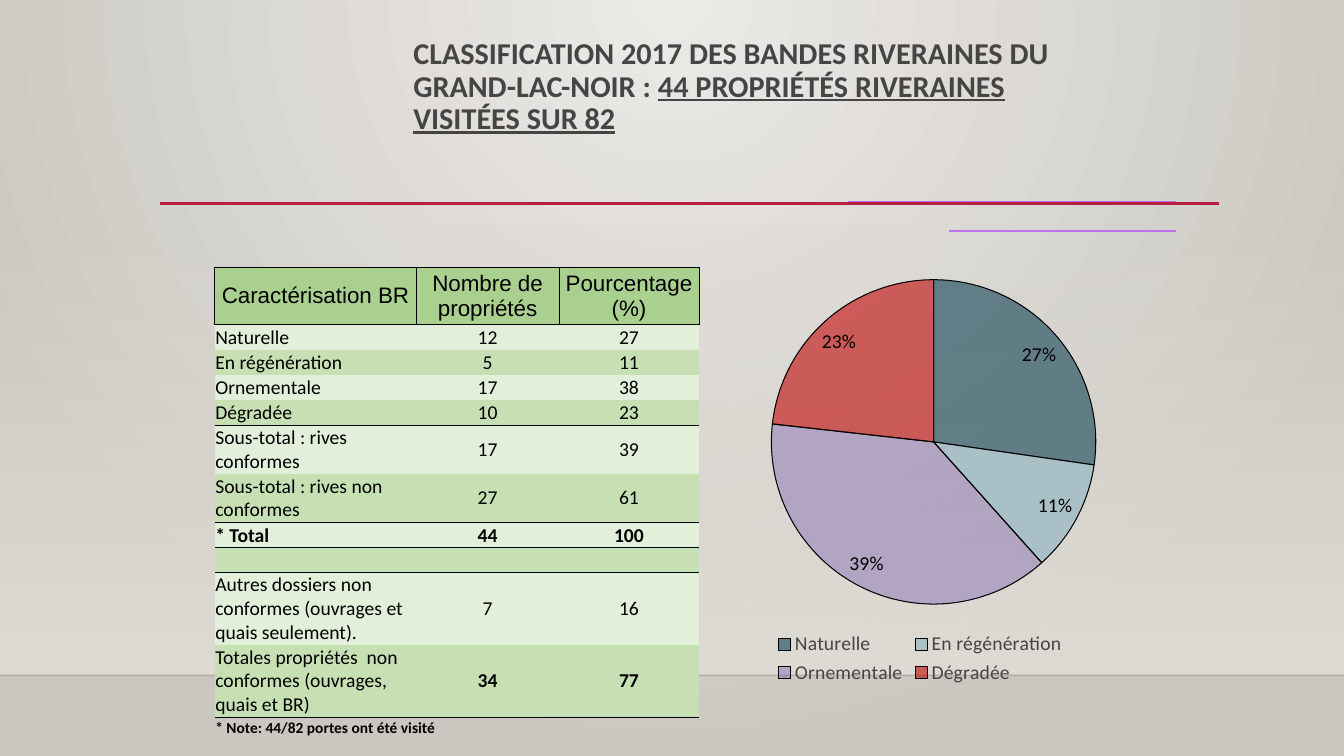
"""Build the 2017 shoreline classification slide with its table and pie chart."""
from typing import NamedTuple

import lxml.etree
import pptx
import pptx.chart.data
import pptx.dml.color
import pptx.enum.chart
import pptx.enum.shapes
import pptx.enum.text
import pptx.oxml
import pptx.oxml.ns
import pptx.util

RGBColor = pptx.dml.color.RGBColor
Anchor = pptx.enum.text.MSO_ANCHOR
qn = pptx.oxml.ns.qn

BLACK = RGBColor(0x00, 0x00, 0x00)
FLOOR_EDGE = RGBColor(0x00, 0x00, 0x01)
CHARCOAL = RGBColor(0x45, 0x45, 0x45)
CRIMSON = RGBColor(0xB7, 0x1E, 0x42)
VIOLET = RGBColor(0xBC, 0x72, 0xF0)
WALL_LIGHT = RGBColor(0xEC, 0xEA, 0xE7)
WALL_DARK = RGBColor(0xCA, 0xC7, 0xC1)
WALL_GLOW = RGBColor(0xDF, 0xDB, 0xD5)
HEADER_GREEN = RGBColor(0xA9, 0xD0, 0x8E)
BAND_GREENS = (RGBColor(0xC6, 0xE0, 0xB4), RGBColor(0xE2, 0xEF, 0xDA))

GRID_COLUMNS, GRID_ROWS = 133.33, 75
FLOOR_ROW = 67
NO_GRID_STYLE = "{2D5ABB26-0587-4C30-8999-92F81FD0307C}"
COLUMN_SPANS = (20, 14.15, 13.9)


class Rule(NamedTuple):
    start: float
    end: float
    row: float
    color: RGBColor
    width: float
    opacity: int = 100


class TableRow(NamedTuple):
    cells: tuple[str, str, str]
    height: float = 2.5
    ruled: bool = False
    label_bold: bool = False
    value_bold: bool = False
    size: float = 14
    anchor: Anchor = Anchor.MIDDLE


class Slice(NamedTuple):
    name: str
    value: int
    label: str
    color: RGBColor
    opacity: int


RULES = (
    Rule(0, GRID_COLUMNS, FLOOR_ROW, FLOOR_EDGE, 1, 20),
    Rule(15.9, 120.95, 20.2, CRIMSON, 2.5),
    Rule(84.15, 116.7, 20, VIOLET, 1.25),
    Rule(94.15, 116.7, 22.9, VIOLET, 1.25),
)
TABLE_ROWS = (
    TableRow(("Caractérisation BR", "Nombre de propriétés", "Pourcentage (%)"), 5.7, size=16),
    TableRow(("Naturelle", "12", "27")),
    TableRow(("En régénération", "5", "11")),
    TableRow(("Ornementale", "17", "38")),
    TableRow(("Dégradée", "10", "23"), ruled=True),
    TableRow(("Sous-total : rives conformes", "17", "39"), 4.8),
    TableRow(("Sous-total : rives non conformes", "27", "61"), 4.8, ruled=True),
    TableRow(("* Total", "44", "100"), ruled=True, label_bold=True, value_bold=True,
             anchor=Anchor.BOTTOM),
    TableRow(("", "", ""), ruled=True),
    TableRow(("Autres dossiers non conformes (ouvrages et quais seulement).", "7", "16"), 7.1),
    TableRow(("Totales propriétés  non conformes (ouvrages, quais et BR)", "34", "77"), 7.2,
             ruled=True, value_bold=True),
    TableRow(("* Note: 44/82 portes ont été visité", "", ""), 2, label_bold=True, size=11,
             anchor=Anchor.BOTTOM),
)
SLICES = (
    Slice("Naturelle", 27, "27%", RGBColor(0x4C, 0x6E, 0x7A), 85),
    Slice("En régénération", 11, "11%", RGBColor(0xA4, 0xBE, 0xC6), 90),
    Slice("Ornementale", 38, "39%", RGBColor(0x79, 0x5F, 0xAF), 41),
    Slice("Dégradée", 23, "23%", RGBColor(0xC0, 0x00, 0x00), 58),
)


def grid(units: float) -> int:
    """Convert grid columns or rows to a length."""
    return pptx.util.Inches(units / 10)


def set_opacity(element: lxml.etree._Element, percent: int) -> None:
    """Give every RGB colour inside the element an opacity."""
    for color in element.iter(qn("a:srgbClr")):
        lxml.etree.SubElement(color, qn("a:alpha"), val=str(percent * 1000))


def set_font(font, size: float, color: RGBColor, name: str = "Calibri", bold: bool = False) -> None:
    """Set the four traits of a font."""
    font.size, font.name, font.bold = pptx.util.Pt(size), name, bold
    font.color.rgb = color


def set_gradient(fill, *colors: RGBColor) -> None:
    """Fill with a two-stop gradient."""
    fill.gradient()
    for stop, color in zip(fill.gradient_stops, colors):
        stop.color.rgb = color


def draw_backdrop(slide) -> None:
    """Draw the radial wall and the glow that fades in above the floor."""
    set_gradient(slide.background.fill, WALL_LIGHT, WALL_DARK)
    linear = next(slide.element.iter(qn("a:lin")))
    radial = lxml.etree.Element(qn("a:path"), path="circle")
    lxml.etree.SubElement(radial, qn("a:fillToRect"), l="43000", t="0", r="43000", b="100000")
    linear.getparent().replace(linear, radial)
    top = 22.1
    glow = slide.shapes.add_shape(pptx.enum.shapes.MSO_SHAPE.RECTANGLE, 0, grid(top),
                                  grid(GRID_COLUMNS), grid(FLOOR_ROW - top))
    glow.shadow.inherit = False
    glow.line.fill.background()
    set_gradient(glow.fill, WALL_GLOW, WALL_GLOW)
    glow.fill.gradient_angle = 270
    set_opacity(next(glow._element.iter(qn("a:gs"))), 0)


def draw_rule(slide, rule: Rule) -> None:
    """Draw one horizontal line."""
    connector = slide.shapes.add_connector(
        pptx.enum.shapes.MSO_CONNECTOR.STRAIGHT,
        grid(rule.start), grid(rule.row), grid(rule.end), grid(rule.row))
    connector.line.color.rgb = rule.color
    connector.line.width = pptx.util.Pt(rule.width)
    properties = connector._element.spPr
    if rule.opacity < 100:
        set_opacity(properties, rule.opacity)
    lxml.etree.SubElement(properties, qn("a:effectLst"))


def write_title(slide) -> None:
    """Place and format the title."""
    title = slide.shapes.title
    title.left, title.top, title.width, title.height = map(grid, (40, 3.3, 71.6, 12.5))
    frame = title.text_frame
    frame.auto_size = pptx.enum.text.MSO_AUTO_SIZE.NONE
    frame.vertical_anchor = Anchor.TOP
    paragraph = frame.paragraphs[0]
    paragraph.alignment = pptx.enum.text.PP_ALIGN.LEFT
    paragraph.line_spacing = 0.9
    set_font(paragraph.font, 21.6, CHARCOAL, bold=True)
    paragraph.add_run().text = "CLASSIFICATION 2017 DES BANDES RIVERAINES DU GRAND-LAC-NOIR : "
    visited = paragraph.add_run()
    visited.text = "44 PROPRIÉTÉS RIVERAINES VISITÉES SUR 82"
    visited.font.underline = True


def add_borders(cell, sides: str) -> None:
    """Add thin black borders on the named sides of a cell."""
    properties = cell._tc.get_or_add_tcPr()
    for side in sides:
        border = lxml.etree.SubElement(properties, qn(f"a:ln{side}"), w="6350")
        solid = lxml.etree.SubElement(border, qn("a:solidFill"))
        lxml.etree.SubElement(solid, qn("a:srgbClr"), val=str(BLACK))


def draw_table(slide) -> None:
    """Draw the classification table."""
    table = slide.shapes.add_table(
        len(TABLE_ROWS), len(COLUMN_SPANS), grid(21.3), grid(26.5), grid(sum(COLUMN_SPANS)),
        grid(sum(row.height for row in TABLE_ROWS))).table
    table.first_row = table.horz_banding = False
    next(table._tbl.iter(qn("a:tableStyleId"))).text = NO_GRID_STYLE
    for column, span in zip(table.columns, COLUMN_SPANS):
        column.width = grid(span)
    note = len(TABLE_ROWS) - 1
    table.cell(note, 0).merge(table.cell(note, 1))
    for index, row in enumerate(TABLE_ROWS):
        table.rows[index].height = grid(row.height)
        for position, text in enumerate(row.cells):
            cell = table.cell(index, position)
            cell.margin_left = cell.margin_right = cell.margin_top = grid(0.06)
            cell.margin_bottom = 0
            cell.vertical_anchor = row.anchor
            add_borders(cell, "LRTB" if index == 0 else "B" if row.ruled else "")
            if index == note:
                cell.fill.background()
            else:
                cell.fill.solid()
                cell.fill.fore_color.rgb = BAND_GREENS[index % 2] if index else HEADER_GREEN
            paragraph = cell.text_frame.paragraphs[0]
            paragraph.text = text
            if index == 0 or position:
                paragraph.alignment = pptx.enum.text.PP_ALIGN.CENTER
            set_font(paragraph.font, row.size, BLACK, "Calibri" if index else "Arial",
                     row.value_bold if position else row.label_bold)
            if not text:
                lxml.etree.SubElement(paragraph._p, qn("a:endParaRPr"), sz=str(row.size * 100))


def draw_pie(slide) -> None:
    """Draw the pie chart with its legend."""
    data = pptx.chart.data.CategoryChartData()
    data.categories = [part.name for part in SLICES]
    for name in ("Series 1", "Series 2"):
        data.add_series(name, [part.value for part in SLICES])
    chart = slide.shapes.add_chart(pptx.enum.chart.XL_CHART_TYPE.PIE, grid(69.3), grid(26.5),
                                   grid(44), grid(41.8), data).chart
    plot = chart.plots[0]
    if len(plot.series) == 1:
        first = plot.series[0]._element
        second = pptx.oxml.parse_xml(lxml.etree.tostring(first))
        for tag in ("c:idx", "c:order"):
            second.find(qn(tag)).set("val", "1")
        reference = second.find(qn("c:tx"))
        next(reference.iter(qn("c:f"))).text = "Sheet1!$C$1"
        next(reference.iter(qn("c:v"))).text = "Series 2"
        next(second.find(qn("c:val")).iter(qn("c:f"))).text = "Sheet1!$C$2:$C$5"
        first.addnext(second)
    chart.has_title = False
    set_font(chart.font, 10, BLACK)
    chart.has_legend = True
    chart.legend.position = pptx.enum.chart.XL_LEGEND_POSITION.BOTTOM
    chart.legend.include_in_layout = False
    set_font(chart.legend.font, 14, CHARCOAL)
    plot.vary_by_categories = True
    for index, part in enumerate(SLICES):
        point = plot.series[0].points[index]
        point.format.fill.solid()
        point.format.fill.fore_color.rgb = part.color
        set_opacity(point.format.fill._xPr, part.opacity)
        point.format.line.color.rgb = BLACK
        point.format.line.width = pptx.util.Pt(0.75)
        label = point.data_label
        paragraph = label.text_frame.paragraphs[0]
        paragraph.text = part.label
        set_font(paragraph.font, 14, BLACK)
        label.position = pptx.enum.chart.XL_LABEL_POSITION.BEST_FIT
    area = next(chart._chartSpace.iter(qn("c:plotArea")))
    for stale in area.findall(qn("c:layout")):
        area.remove(stale)
    layout = lxml.etree.Element(qn("c:layout"))
    manual = lxml.etree.SubElement(layout, qn("c:manualLayout"))
    for tag, value in (("layoutTarget", "inner"), ("xMode", "edge"), ("yMode", "edge"),
                       ("x", "0.16"), ("y", "0.03"), ("w", "0.74"), ("h", "0.77")):
        lxml.etree.SubElement(manual, qn(f"c:{tag}"), val=value)
    area.insert(0, layout)


def main() -> None:
    """Build and save the presentation."""
    presentation = pptx.Presentation()
    presentation.slide_width, presentation.slide_height = grid(GRID_COLUMNS), grid(GRID_ROWS)
    slide = presentation.slides.add_slide(presentation.slide_layouts.get_by_name("Title Only"))
    draw_backdrop(slide)
    for rule in RULES:
        draw_rule(slide, rule)
    write_title(slide)
    draw_table(slide)
    draw_pie(slide)
    presentation.save("out.pptx")


if __name__ == "__main__":
    main()
